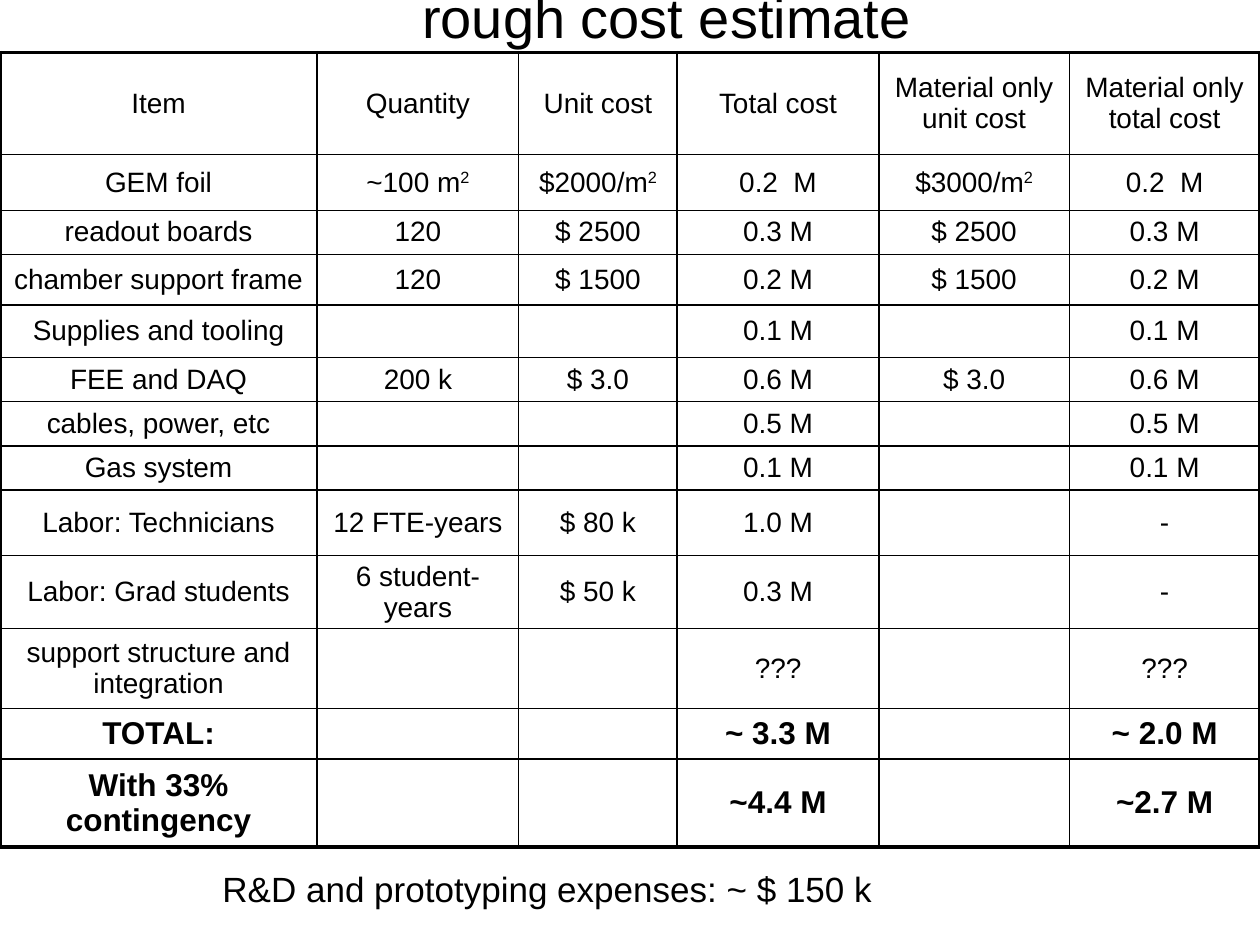
import pptx
import pptx.dml.color
import pptx.enum.text
import pptx.oxml
import pptx.oxml.ns
import pptx.util

Pt = pptx.util.Pt
ALIGN = pptx.enum.text.PP_ALIGN
ANCHOR = pptx.enum.text.MSO_ANCHOR

COLORS = {"ink": "000000"}
COLUMN_WIDTHS = [181.2, 115.2, 90.6, 115.2, 108.9, 108.9]
ROW_HEIGHTS = [58.3, 31.9, 25.2, 28.8, 30.2, 25.2, 25.2, 25.2, 37.4, 41.9, 44.2, 27.6, 47.4]
TIGHT_ROWS = range(1, 10)
TOTAL_ROWS = range(11, 13)
COSTS = [
    ["Item", "Quantity", "Unit cost", "Total cost", "Material only unit cost", "Material only total cost"],
    ["GEM foil", "~100 m^2", "$2000/m^2", "0.2  M", "$3000/m^2", "0.2  M"],
    ["readout boards", "120", "$ 2500", "0.3 M", "$ 2500", "0.3 M"],
    ["chamber support frame", "120", "$ 1500", "0.2 M", "$ 1500", "0.2 M"],
    ["Supplies and tooling", "", "", "0.1 M", "", "0.1 M"],
    ["FEE and DAQ", "200 k", "$ 3.0", "0.6 M", "$ 3.0", "0.6 M"],
    ["cables, power, etc", "", "", "0.5 M", "", "0.5 M"],
    ["Gas system", "", "", "0.1 M", "", "0.1 M"],
    ["Labor: Technicians", "12 FTE-years", "$ 80 k", "1.0 M", "", "-"],
    ["Labor: Grad students", "6 student-years", "$ 50 k", "0.3 M", "", "-"],
    ["support structure and integration", "", "", "???", "", "???"],
    ["TOTAL:", "", "", "~ 3.3 M", "", "~ 2.0 M"],
    ["With 33% contingency", "", "", "~4.4 M", "", "~2.7 M"],
]


class CostSlide:
    font_name = "Arial"
    inner_line = 1
    outer_line = 2.25

    def __init__(self, deck):
        self.slide = deck.slides.add_slide(deck.slide_layouts[6])

    def fill_paragraph(self, para, text, size, bold=False, align=ALIGN.CENTER):
        """Set text and style; what follows a ^ becomes superscript."""
        para.alignment = align
        para.font.name = self.font_name
        para.font.size = Pt(size)
        para.font.bold = bold
        para.font.color.rgb = pptx.dml.color.RGBColor.from_string(COLORS["ink"])
        base, _, exponent = text.partition("^")
        if base:
            para.add_run().text = base
        if exponent:
            span = para.add_run()
            span.text = exponent
            span._r.get_or_add_rPr().set("baseline", "30000")

    def text(self, text, left, top, width, height, size, align=ALIGN.LEFT, anchor=ANCHOR.TOP, wrap=True):
        box = self.slide.shapes.add_textbox(Pt(left), Pt(top), Pt(width), Pt(height))
        box.text_frame.word_wrap = wrap
        box.text_frame.vertical_anchor = anchor
        self.fill_paragraph(box.text_frame.paragraphs[0], text, size, align=align)

    def borders(self, cell, outer_sides):
        properties = cell._tc.get_or_add_tcPr()
        for side in "LRTB":
            width = self.outer_line if side in outer_sides else self.inner_line
            properties.append(pptx.oxml.parse_xml(
                f'<a:ln{side} {pptx.oxml.ns.nsdecls("a")} w="{int(Pt(width))}">'
                f'<a:solidFill><a:srgbClr val="{COLORS["ink"]}"/></a:solidFill></a:ln{side}>'))

    def table(self, rows, left, top, widths, heights):
        frame = self.slide.shapes.add_table(len(rows), len(widths), Pt(left), Pt(top),
                                            Pt(sum(widths)), Pt(sum(heights)))
        table = frame.table
        table.first_row = table.horz_banding = False
        for column, width in zip(table.columns, widths):
            column.width = Pt(width)
        for row, height in zip(table.rows, heights):
            row.height = Pt(height)
        for r, row in enumerate(rows):
            for c, text in enumerate(row):
                cell = table.cell(r, c)
                edges = {"L": c == 0, "R": c == len(widths) - 1, "T": r == 0, "B": r == len(rows) - 1}
                self.borders(cell, [side for side, is_outer in edges.items() if is_outer])
                cell.fill.background()
                cell.vertical_anchor = ANCHOR.MIDDLE
                if r in TIGHT_ROWS:
                    cell.margin_top = cell.margin_bottom = 0
                is_total = r in TOTAL_ROWS
                self.fill_paragraph(cell.text_frame.paragraphs[0], text, 18 if is_total else 16, is_total)


def main():
    deck = pptx.Presentation()
    deck.slide_width, deck.slide_height = Pt(720), Pt(540)
    page = CostSlide(deck)
    page.text("rough cost estimate", 174, 0, 414, 18, 32, ALIGN.CENTER, ANCHOR.MIDDLE)
    page.table(COSTS, 0, 30, COLUMN_WIDTHS, ROW_HEIGHTS)
    page.text("R&D and prototyping expenses: ~ $ 150 k", 120, 492, 389, 32, 20, wrap=False)
    deck.save("out.pptx")


if __name__ == "__main__":
    main()
